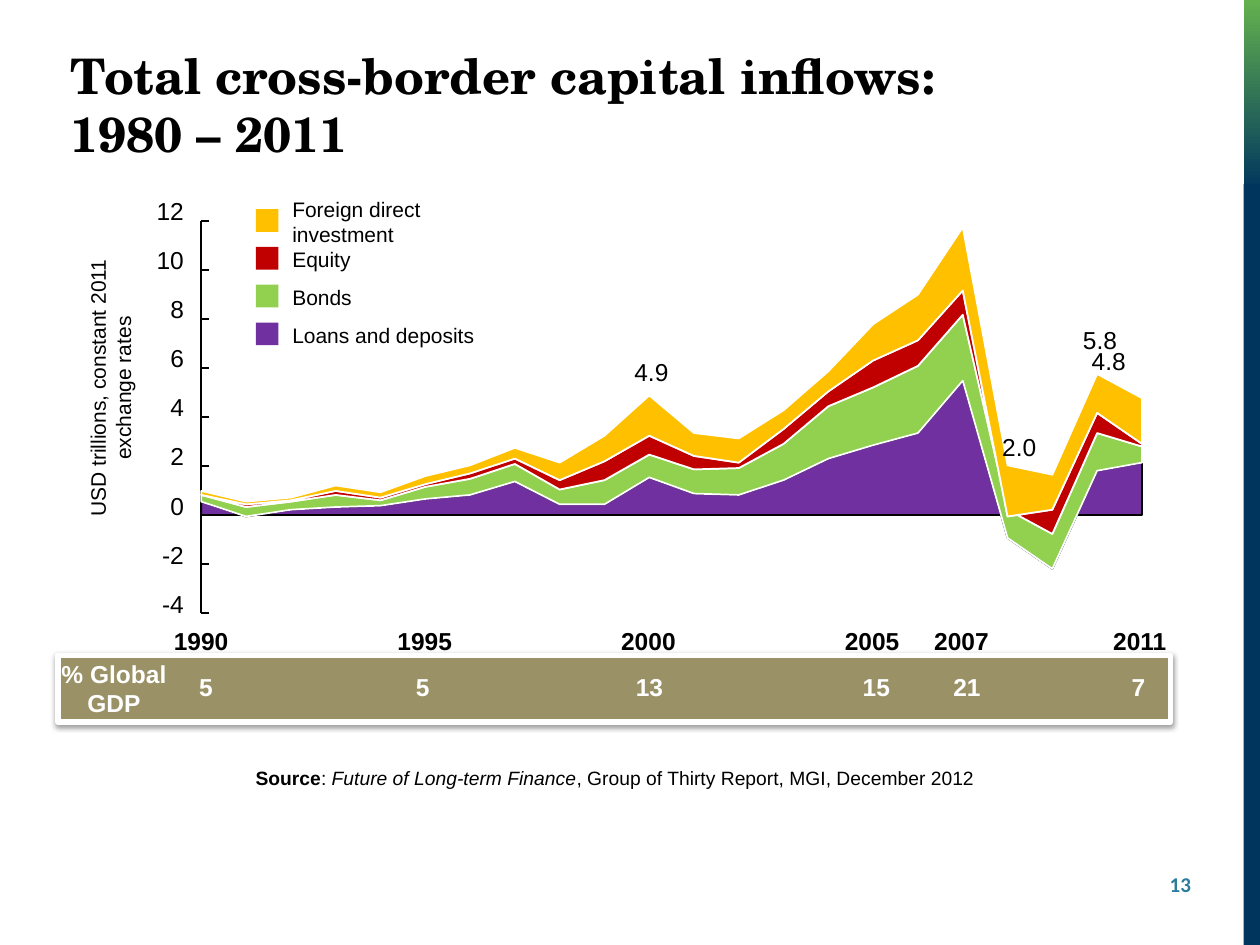
from dataclasses import dataclass, field

from lxml import etree
from pptx import Presentation
from pptx import util as u
from pptx.chart.data import CategoryChartData
from pptx.dml.color import RGBColor
from pptx.enum import chart as charts
from pptx.enum import shapes, text
from pptx.oxml import parse_xml
from pptx.oxml.ns import nsdecls, qn

BLACK = RGBColor(0, 0, 0)
WHITE = RGBColor(255, 255, 255)
PURPLE = RGBColor(0x70, 0x30, 0xA0)
LIME = RGBColor(0x92, 0xD0, 0x50)
RED = RGBColor(0xC0, 0, 0)
AMBER = RGBColor(0xFF, 0xC0, 0)
NAVY = RGBColor(0, 0x36, 0x5E)
GREEN = RGBColor(0x63, 0xB1, 0x4E)
KHAKI = RGBColor(0x9B, 0x91, 0x66)
TEAL = RGBColor(0x2C, 0x7C, 0x9F)

LEFT, CENTER, RIGHT = text.PP_ALIGN.LEFT, text.PP_ALIGN.CENTER, text.PP_ALIGN.RIGHT
TOP, MIDDLE, BOTTOM = text.MSO_ANCHOR.TOP, text.MSO_ANCHOR.MIDDLE, text.MSO_ANCHOR.BOTTOM
GROW = text.MSO_AUTO_SIZE.SHAPE_TO_FIT_TEXT


@dataclass
class Label:
    words: str
    left: float
    top: float
    width: float
    height: float
    size: int = 14
    color: RGBColor = BLACK
    bold: bool = False
    name: str = "Arial"
    align: text.PP_ALIGN = LEFT
    spacing: float | None = None
    insets: tuple[float, float] = (0, 0)
    frame: dict = field(default_factory=dict)
    rotation: float = 0


@dataclass
class Flow:
    name: str
    legend: str
    color: RGBColor
    line: RGBColor
    values: tuple[int, ...]


FLOWS = [
    Flow("Series 1", "Loans and deposits", PURPLE, BLACK,
         (10, -1, 4, 6, 7, 12, 15, 25, 8, 8, 28, 16, 15, 26, 42, 52, 61, 100, -17, -40, 33, 39)),
    Flow("Series 2", "Bonds", LIME, WHITE,
         (5, 7, 6, 9, 4, 9, 12, 13, 11, 18, 17, 18, 20, 27, 39, 43, 50, 49, 21, 26, 28, 12)),
    Flow("Series 3", "Equity", RED, WHITE,
         (0, 2, 1, 3, 2, 2, 4, 4, 7, 14, 14, 10, 4, 11, 11, 20, 19, 18, -5, 18, 15, 2)),
    Flow("Series 4", "Foreign direct investment", AMBER, WHITE,
         (3, 2, 2, 4, 4, 6, 6, 8, 13, 19, 30, 17, 18, 14, 15, 27, 34, 47, 38, 26, 29, 34)),
]
GDP_SHARES = [(1990, "5", 1.42), (1995, "5", 3.14), (2000, "13", 4.94),
              (2005, "15", 6.74), (2007, "21", 7.46), (2011, "7", 8.82)]
TOTALS = [("5.8", 8.57, 2.58, BOTTOM), ("2.0", 7.93, 3.43, BOTTOM),
          ("4.9", 5.01, 2.84, BOTTOM), ("4.8", 8.64, 2.75, TOP)]


def apply(target, formats: dict) -> None:
    for key, value in formats.items():
        setattr(target, key, value)


def add_label(page, label: Label):
    box = page.shapes.add_textbox(*map(u.Inches, (label.left, label.top, label.width, label.height)))
    box.rotation = label.rotation
    side, edge = map(u.Inches, label.insets)
    apply(box.text_frame, {"word_wrap": True, "margin_left": side, "margin_right": side,
                           "margin_top": edge, "margin_bottom": edge, **label.frame})
    para = box.text_frame.paragraphs[0]
    apply(para, {"alignment": label.align, "line_spacing": label.spacing})
    add_span(para, label.words, size=u.Pt(label.size), name=label.name, bold=label.bold)
    para.runs[0].font.color.rgb = label.color
    return box


def add_span(para, words: str, **formats) -> None:
    span = para.add_run()
    span.text = words
    apply(span.font, formats)
    span.font.color.rgb = BLACK


def add_block(page, left: float, top: float, width: float, height: float, color: RGBColor):
    block = page.shapes.add_shape(shapes.MSO_SHAPE.RECTANGLE,
                                  *map(u.Inches, (left, top, width, height)))
    block.shadow.inherit = False
    block.fill.solid()
    block.fill.fore_color.rgb = color
    block.line.fill.background()
    return block


def add_side_bar(page) -> None:
    fade = add_block(page, 9.87, 0, 0.13, 1.51, GREEN)
    fade.fill.gradient()
    fade.fill.gradient_angle = 270
    for stop, color in zip(fade.fill.gradient_stops, (GREEN, NAVY)):
        stop.color.rgb = color
    add_block(page, 9.87, 1.46, 0.13, 6.04, NAVY)


def add_title(page) -> None:
    title = page.shapes.title
    apply(title, {"left": u.Inches(0.46), "top": u.Inches(0.71),
                  "width": u.Inches(9), "height": u.Inches(0.23)})
    title.text_frame.text = "Total cross-border capital inflows: \v1980 – 2011"
    apply(title.text_frame, {"vertical_anchor": MIDDLE, "auto_size": text.MSO_AUTO_SIZE.NONE})
    para = title.text_frame.paragraphs[0]
    para.alignment = LEFT
    for span in para.runs:
        apply(span.font, {"size": u.Pt(28), "name": "TeX Gyre Schola", "bold": True})
        span.font.color.rgb = BLACK


def add_gdp_band(page) -> None:
    band = add_block(page, 0.46, 5.2, 8.83, 0.53, KHAKI)
    band.line.color.rgb = WHITE
    band.line.width = u.Pt(3)
    effects = band._element.spPr.find(qn("a:effectLst"))
    effects.append(parse_xml(
        f'<a:outerShdw {nsdecls("a")} blurRad="{u.Pt(3.1)}" dist="{u.Pt(1.6)}" dir="5400000" '
        'rotWithShape="0"><a:srgbClr val="000000"><a:alpha val="38000"/></a:srgbClr></a:outerShdw>'))


def add_inflow_chart(page) -> None:
    data = CategoryChartData()
    data.categories = [str(number) for number in range(1, 23)]
    for flow in FLOWS:
        data.add_series(flow.name, flow.values)
    chart = page.shapes.add_chart(charts.XL_CHART_TYPE.AREA_STACKED,
                                  *map(u.Inches, (1.46, 1.69, 7.65, 3.23)), data).chart
    apply(chart, {"has_legend": False, "has_title": False})
    apply(chart.font, {"size": u.Pt(12), "name": "Arial", "bold": True})
    chart.font.color.rgb = BLACK
    for axis in (chart.category_axis, chart.value_axis):
        apply(axis, {"has_major_gridlines": False, "major_tick_mark": charts.XL_TICK_MARK.INSIDE,
                     "minor_tick_mark": charts.XL_TICK_MARK.NONE,
                     "tick_label_position": charts.XL_TICK_LABEL_POSITION.NONE})
        axis.format.line.color.rgb = BLACK
        axis.format.line.width = u.Pt(1)
    apply(chart.value_axis, {"minimum_scale": -73, "maximum_scale": 219, "major_unit": 36.5})
    for series, flow in zip(chart.plots[0].series, FLOWS):
        series.format.fill.solid()
        series.format.fill.fore_color.rgb = flow.color
        series.format.line.color.rgb = flow.line
        series.format.line.width = u.Pt(1)
    area = chart._chartSpace.chart.plotArea
    for crossing in area.iter(qn("c:crossBetween")):
        crossing.set("val", "midCat")
    for layout in area.findall(qn("c:layout")):
        area.remove(layout)
    layout = etree.Element(qn("c:layout"))
    manual = etree.SubElement(layout, qn("c:manualLayout"))
    for tag, value in {"layoutTarget": "inner", "xMode": "edge", "yMode": "edge", "x": "0.018",
                       "y": "0.019", "w": "0.976", "h": "0.965"}.items():
        etree.SubElement(manual, qn(f"c:{tag}")).set("val", value)
    area.insert(0, layout)


def add_chart_labels(page) -> None:
    for row, flow in enumerate(reversed(FLOWS)):
        top = 1.66 + 0.3 * row
        add_block(page, 2.03, top, 0.18, 0.18, flow.color)
        add_label(page, Label(flow.legend, 2.32, top, 1.87, 0.2, 12,
                              frame={"vertical_anchor": MIDDLE}))
    for row, value in enumerate(range(12, -5, -2)):
        add_label(page, Label(str(value), 1.16, 1.58 + 0.39 * row, 0.3, 0.21, align=RIGHT,
                              spacing=0.9, frame={"vertical_anchor": MIDDLE}))
    for total, left, top, anchor in TOTALS:
        add_label(page, Label(total, left, top, 0.32, 0.23, align=CENTER, insets=(0.02, 0),
                              frame={"vertical_anchor": anchor, "word_wrap": False}))
    for year, share, left in GDP_SHARES:
        add_label(page, Label(str(year), 1.38 + 0.355 * (year - 1990), 4.97, 0.44, 0.23, bold=True))
        add_label(page, Label(share, left, 5.33, 0.43, 0.27, color=WHITE, bold=True, align=CENTER))
    add_label(page, Label("% Global GDP", 0.46, 5.23, 0.89, 0.47, color=WHITE, bold=True,
                          align=CENTER, frame={"auto_size": GROW}))
    add_label(page, Label("USD trillions, constant 2011 exchange rates", -0.36, 2.83, 2.47, 0.5, 12,
                          align=CENTER, insets=(0.1, 0.05), frame={"auto_size": GROW}, rotation=270))


def add_footer(page) -> None:
    source = add_label(page, Label("Source", 1.93, 6.03, 5.93, 0.29, 11, bold=True,
                                   insets=(0.1, 0.05),
                                   frame={"word_wrap": False, "auto_size": GROW}))
    para = source.text_frame.paragraphs[0]
    for words, italic in ((": ", False), ("Future of Long-term Finance", True),
                          (", Group of Thirty Report, MGI, December 2012", False)):
        add_span(para, words, size=u.Pt(11), name="Arial", bold=False, italic=italic)
    add_label(page, Label("13", 9.06, 6.87, 0.49, 0.4, 12, TEAL, True, "Calibri", RIGHT,
                          insets=(0.1, 0.05)))


def main() -> None:
    deck = Presentation()
    apply(deck, {"slide_width": u.Inches(10), "slide_height": u.Inches(7.5)})
    page = deck.slides.add_slide(deck.slide_layouts[5])
    for draw in (add_side_bar, add_title, add_gdp_band, add_inflow_chart, add_chart_labels, add_footer):
        draw(page)
    deck.save("out.pptx")


if __name__ == "__main__":
    main()
